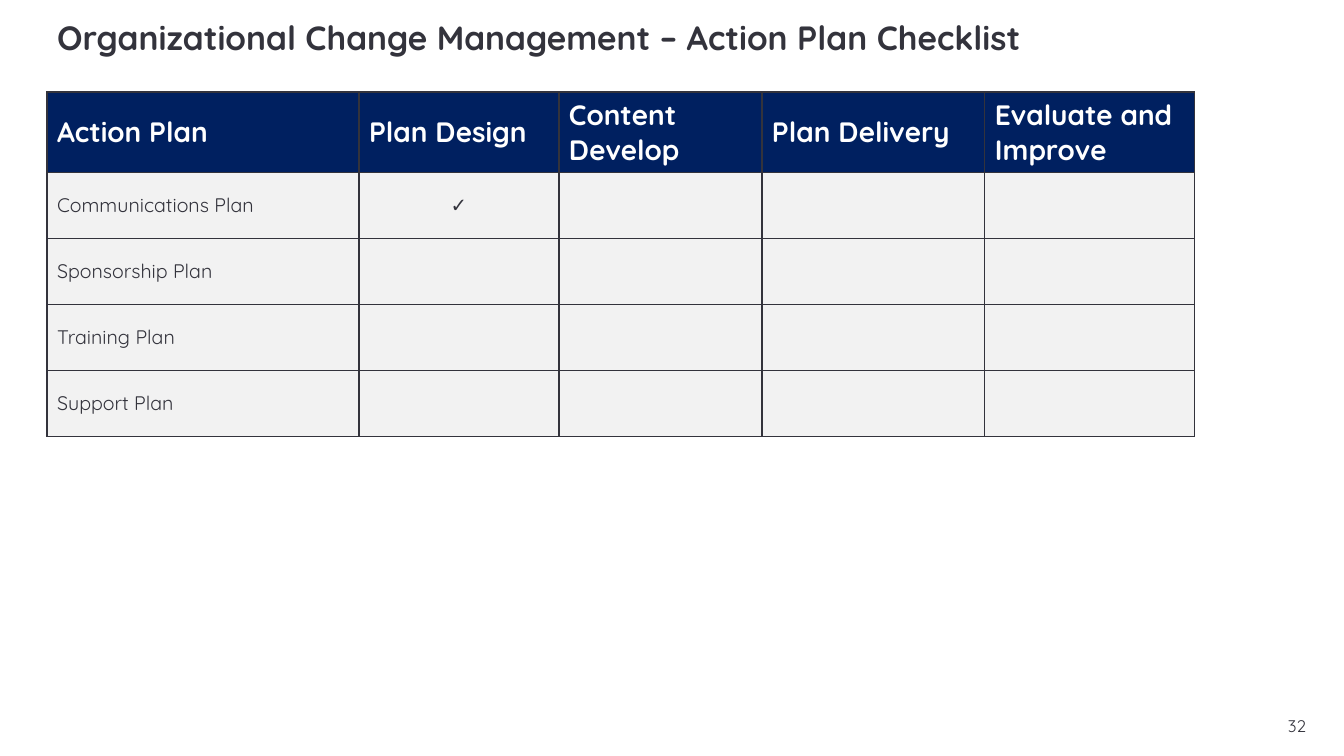
import dataclasses

import lxml.etree
import pptx
import pptx.dml.color
import pptx.enum.text
import pptx.oxml.ns
import pptx.util

PX = 914400 / 100.8
ALIGN = pptx.enum.text.PP_ALIGN
ANCHOR = pptx.enum.text.MSO_ANCHOR


@dataclasses.dataclass(frozen=True)
class Theme:
    """Colours, font and type sizes of the slide."""
    font: str = "Quicksand"
    ink: str = "33333C"
    navy: str = "002060"
    pale: str = "F2F2F2"
    white: str = "FFFFFF"
    title: int = 24
    head: int = 20
    body: int = 14
    small: int = 12


THEME = Theme()
COLS = [312, 200, 203, 223, 210]
ROWS = [75, 66, 66, 66, 66]
HEADS = ["Action Plan", "Plan Design", "Content Develop", "Plan Delivery",
         "Evaluate and Improve"]
PLANS = ["Communications Plan", "Sponsorship Plan", "Training Plan", "Support Plan"]
DONE = {("Communications Plan", "Plan Design")}


def scale(*lengths):
    """Turn px lengths into EMU."""
    return [pptx.util.Emu(round(length * PX)) for length in lengths]


def write(frame, text, size, color=THEME.ink, bold=False, align=ALIGN.LEFT):
    """Put one styled paragraph in a text frame and return it."""
    frame.text = text
    para = frame.paragraphs[0]
    para.alignment = align
    para.font.name = THEME.font
    para.font.size = pptx.util.Pt(size)
    para.font.bold = bold
    para.font.color.rgb = pptx.dml.color.RGBColor.from_string(color)
    return para


def frame_cell(cell):
    """Draw a thin ink border on all four sides of a cell."""
    props = cell._tc.get_or_add_tcPr()
    tag = pptx.oxml.ns.qn
    for place, side in enumerate(("a:lnL", "a:lnR", "a:lnT", "a:lnB")):
        line = lxml.etree.Element(tag(side), w=str(pptx.util.Pt(1)))
        fill = lxml.etree.SubElement(line, tag("a:solidFill"))
        lxml.etree.SubElement(fill, tag("a:srgbClr"), val=THEME.ink)
        props.insert(place, line)


def style_cell(cell, text, head, align):
    """Fill, border and write one cell."""
    cell.fill.solid()
    shade = THEME.navy if head else THEME.pale
    cell.fill.fore_color.rgb = pptx.dml.color.RGBColor.from_string(shade)
    cell.vertical_anchor = ANCHOR.MIDDLE
    write(cell.text_frame, text, THEME.head if head else THEME.body,
          THEME.white if head else THEME.ink, head, align)
    frame_cell(cell)


def add_title(slide, box):
    """Place the slide title in the box."""
    title = slide.shapes.title
    title.left, title.top, title.width, title.height = scale(*box)
    frame = title.text_frame
    frame.auto_size = pptx.enum.text.MSO_AUTO_SIZE.NONE
    frame.vertical_anchor = ANCHOR.TOP
    para = write(frame, "Organizational Change Management – Action Plan Checklist",
                 THEME.title, bold=True)
    para.line_spacing = 0.9


def add_checks(slide, left, top):
    """Place the checklist table with its corner at left, top."""
    box = scale(left, top, sum(COLS), sum(ROWS))
    table = slide.shapes.add_table(len(ROWS), len(COLS), *box).table
    for col, width in zip(table.columns, scale(*COLS)):
        col.width = width
    for row, height in zip(table.rows, scale(*ROWS)):
        row.height = height
    lines = [HEADS] + [
        [plan] + ["✓" if (plan, step) in DONE else "" for step in HEADS[1:]]
        for plan in PLANS]
    for r, line in enumerate(lines):
        for c, text in enumerate(line):
            align = ALIGN.CENTER if r and c else ALIGN.LEFT
            style_cell(table.cell(r, c), text, r == 0, align)


def add_page(slide, box):
    """Place the page number in the box."""
    frame = slide.shapes.add_textbox(*scale(*box)).text_frame
    frame.word_wrap = True
    frame.vertical_anchor = ANCHOR.MIDDLE
    write(frame, "32", THEME.small, align=ALIGN.RIGHT)


def main():
    """Build and save the slide."""
    deck = pptx.Presentation()
    deck.slide_width, deck.slide_height = scale(1344, 756)
    slide = deck.slides.add_slide(deck.slide_layouts[5])
    add_title(slide, (47, 16, 1251, 51))
    add_checks(slide, 47, 92)
    add_page(slide, (1246, 706, 70, 40))
    deck.save("out.pptx")


if __name__ == "__main__":
    main()
